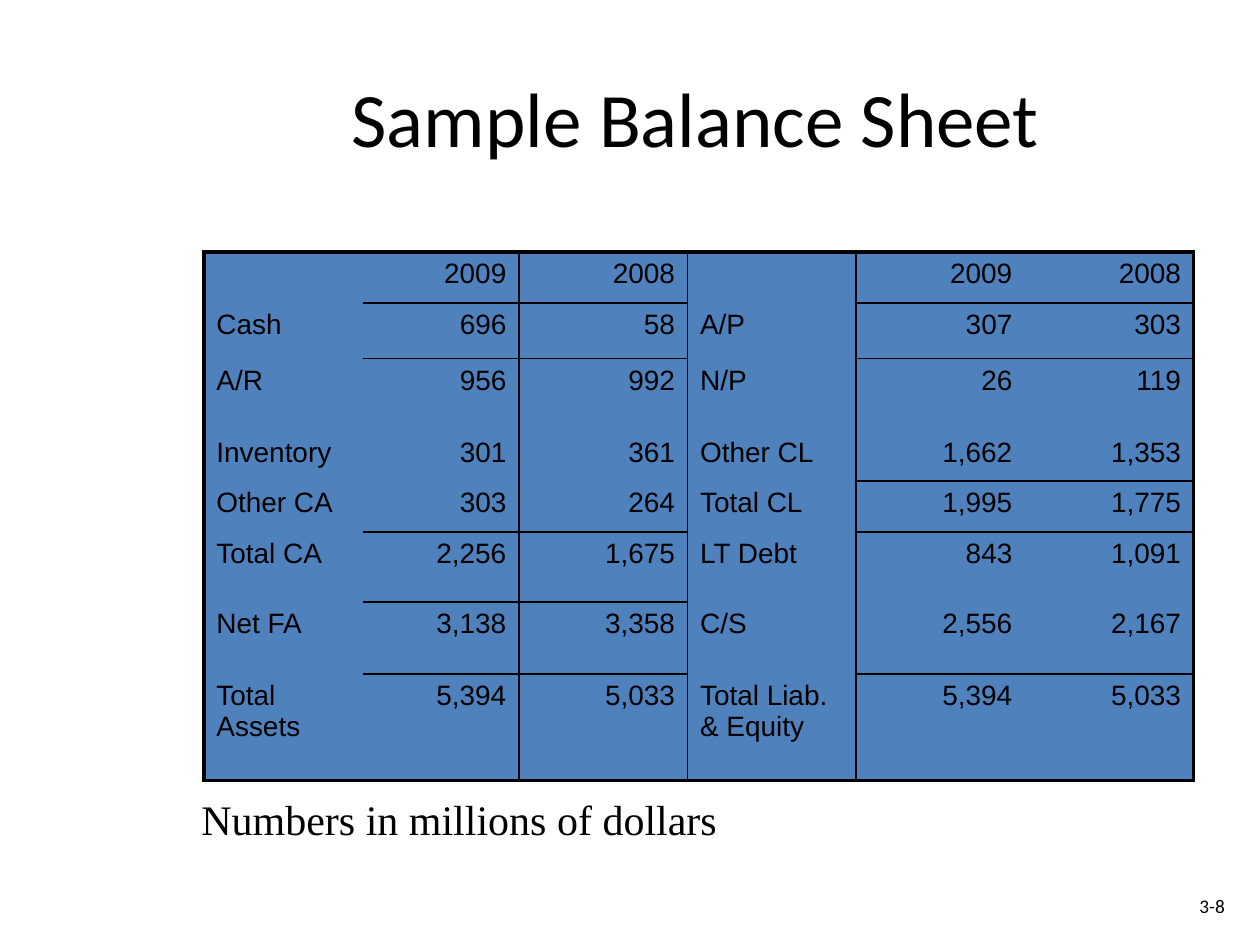
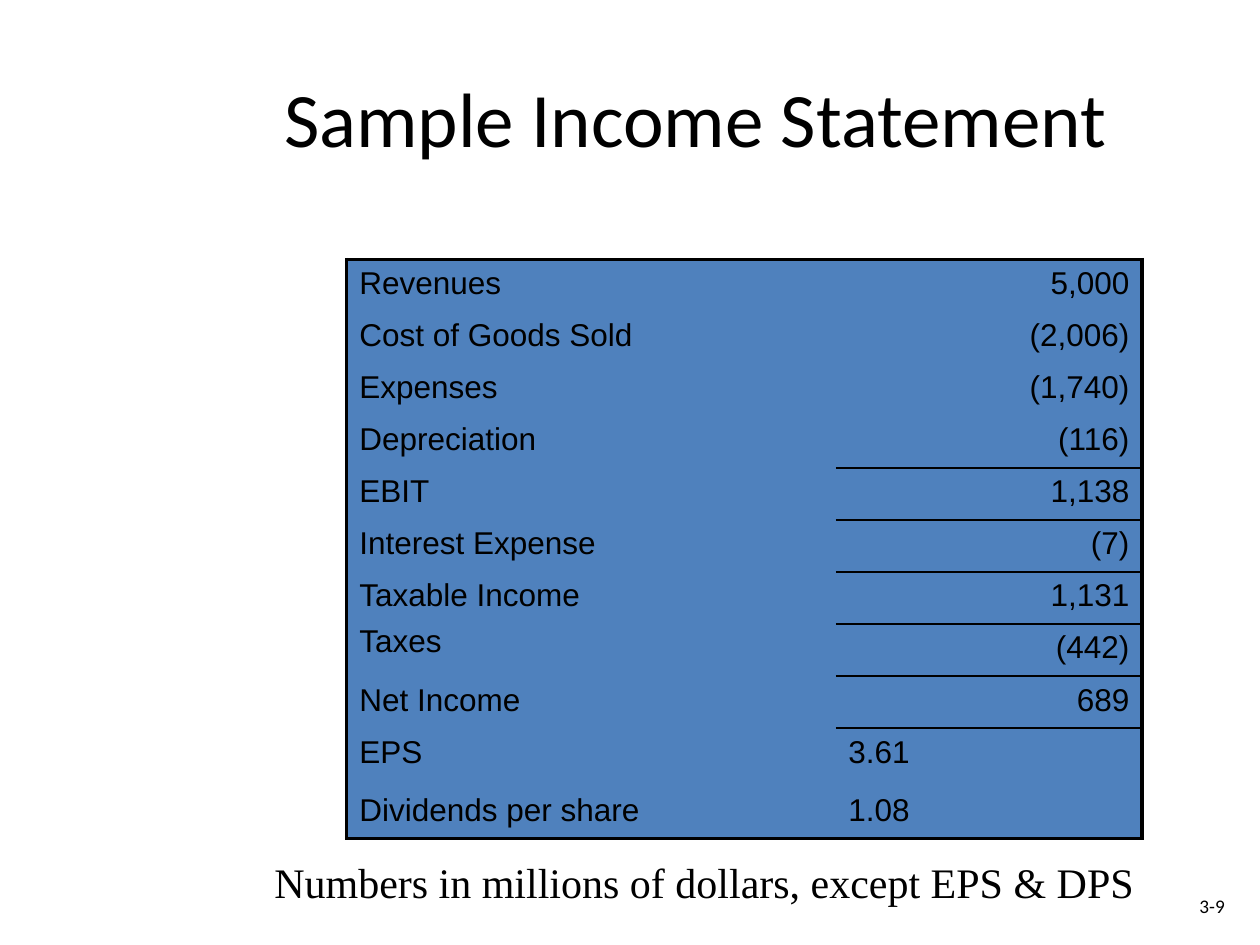
from lxml import etree
from pptx import Presentation
from pptx.dml.color import RGBColor
from pptx.enum import text
from pptx.oxml.ns import qn
from pptx.util import Cm, Pt

BLACK = RGBColor(0x00, 0x00, 0x00)
BLUE = RGBColor(0x4F, 0x81, 0xBD)
OUTLINE, RULE = Pt(2.25), Pt(1)
PLAIN_TABLE = "{2D5ABB26-0587-4C30-8999-92F81FD0307C}"
LEFT, RIGHT = text.PP_ALIGN.LEFT, text.PP_ALIGN.RIGHT

# Content: "rules" maps a column to the row boundaries ruled in it,
# "dividers" are the column boundaries ruled from top to bottom
STATEMENTS = [
    {
        "title": "Sample Balance Sheet",
        "number": "3-8",
        "caption": "Numbers in millions of dollars",
        "caption_box": (3.81, 15.88, 13.77, 1.27),
        "rows": [
            ("", "2009", "2008", "", "2009", "2008"),
            ("Cash", "696", "58", "A/P", "307", "303"),
            ("A/R", "956", "992", "N/P", "26", "119"),
            ("Inventory", "301", "361", "Other CL", "1,662", "1,353"),
            ("Other CA", "303", "264", "Total CL", "1,995", "1,775"),
            ("Total CA", "2,256", "1,675", "LT Debt", "843", "1,091"),
            ("Net FA", "3,138", "3,358", "C/S", "2,556", "2,167"),
            ("Total Assets", "5,394", "5,033",
             "Total Liab. & Equity", "5,394", "5,033"),
        ],
        "corner": (4.11, 5.08),
        "widths": [3.2, 3.15] + [3.4] * 4,
        "heights": [1.02, 1.12, 1.45, 1.02, 1.02, 1.42, 1.45, 2.14],
        "size": 16,
        "label_columns": (0, 3),
        "left_rows": (),
        "tight_cells": (),
        "rules": {1: (1, 5, 7), 2: (1, 5, 7), 4: (1, 4, 7), 5: (1, 4, 7)},
        "dividers": (2, 3),
    },
    {
        "title": "Sample Income Statement",
        "number": "3-9",
        "caption": "Numbers in millions of dollars, except EPS & DPS",
        "caption_box": (5.28, 17.15, 18.42, 1.27),
        "rows": [
            ("Revenues", "5,000"),
            ("Cost of Goods Sold", "(2,006)"),
            ("Expenses", "(1,740)"),
            ("Depreciation", "(116)"),
            ("EBIT", "1,138"),
            ("Interest Expense", "(7)"),
            ("Taxable Income", "1,131"),
            ("Taxes", "(442)"),
            ("Net Income", "689"),
            ("EPS", "3.61"),
            ("Dividends per share", "1.08"),
        ],
        "corner": (6.99, 5.23),
        "widths": [9.86, 6.17],
        "heights": [1.05] * 9 + [1.17, 1.05],
        "size": 18,
        "label_columns": (0,),
        "left_rows": (9, 10),
        "tight_cells": ((7, 0),),
        "rules": {1: (4, 6, 8)},
        "dividers": (),
    },
]


def format_text(frame, words, font, size, align=LEFT):
    frame.text = words
    para = frame.paragraphs[0]
    para.alignment = align
    for span in para.runs:
        span.font.name = font
        span.font.size = Pt(size)
        span.font.color.rgb = BLACK


def add_label(page, box_cm, words, font, size, wrap):
    box = page.shapes.add_textbox(*map(Cm, box_cm))
    frame = box.text_frame
    frame.word_wrap = wrap
    frame.auto_size = text.MSO_AUTO_SIZE.SHAPE_TO_FIT_TEXT
    format_text(frame, words, font, size)


def edge_width(boundary, last, ruled):
    if boundary in (0, last):
        return OUTLINE
    return RULE if boundary in ruled else None


def draw_edges(cell, widths):
    properties = cell._tc.get_or_add_tcPr()
    for side, width in widths.items():
        if width:
            line = etree.SubElement(properties, qn("a:" + side), w=str(width))
            fill = etree.SubElement(line, qn("a:solidFill"))
            etree.SubElement(fill, qn("a:srgbClr"), val=str(BLACK))


def add_statement_table(page, statement):
    rows = statement["rows"]
    widths, heights = statement["widths"], statement["heights"]
    row_count, column_count = len(heights), len(widths)
    table = page.shapes.add_table(
        row_count, column_count, *map(Cm, statement["corner"]),
        Cm(sum(widths)), Cm(sum(heights))).table
    table.first_row = table.horz_banding = False
    table._tbl.tblPr.find(qn("a:tableStyleId")).text = PLAIN_TABLE
    for column, width in zip(table.columns, widths):
        column.width = Cm(width)
    for row, height in zip(table.rows, heights):
        row.height = Cm(height)

    dividers = statement["dividers"]
    for r, values in enumerate(rows):
        for c, value in enumerate(values):
            cell = table.cell(r, c)
            is_left = c in statement["label_columns"] or r in statement["left_rows"]
            format_text(cell.text_frame, value, "Arial", statement["size"],
                        LEFT if is_left else RIGHT)
            if (r, c) in statement["tight_cells"]:
                cell.margin_top = cell.margin_bottom = 0
            ruled = statement["rules"].get(c, ())
            draw_edges(cell, {
                "lnL": edge_width(c, column_count, dividers),
                "lnR": edge_width(c + 1, column_count, dividers),
                "lnT": edge_width(r, row_count, ruled),
                "lnB": edge_width(r + 1, row_count, ruled),
            })
            cell.fill.solid()
            cell.fill.fore_color.rgb = BLUE


def add_statement_page(deck, statement):
    page = deck.slides.add_slide(deck.slide_layouts[5])
    # Title
    title = page.shapes.title
    title.left, title.top, title.width, title.height = map(
        Cm, (3.94, 0.76, 20.17, 3.18))
    title.text_frame.vertical_anchor = text.MSO_ANCHOR.MIDDLE
    format_text(title.text_frame, statement["title"], "Calibri", 44,
                text.PP_ALIGN.CENTER)
    # Table, caption and page number
    add_statement_table(page, statement)
    add_label(page, statement["caption_box"], statement["caption"],
              "Times New Roman", 24, True)
    add_label(page, (23.93, 17.91, 1.07, 0.71), statement["number"],
              "Calibri", 11, False)


def main():
    deck = Presentation()
    deck.slide_width, deck.slide_height = Cm(25.4), Cm(19.05)
    for statement in STATEMENTS:
        add_statement_page(deck, statement)
    deck.save("out.pptx")


if __name__ == "__main__":
    main()
